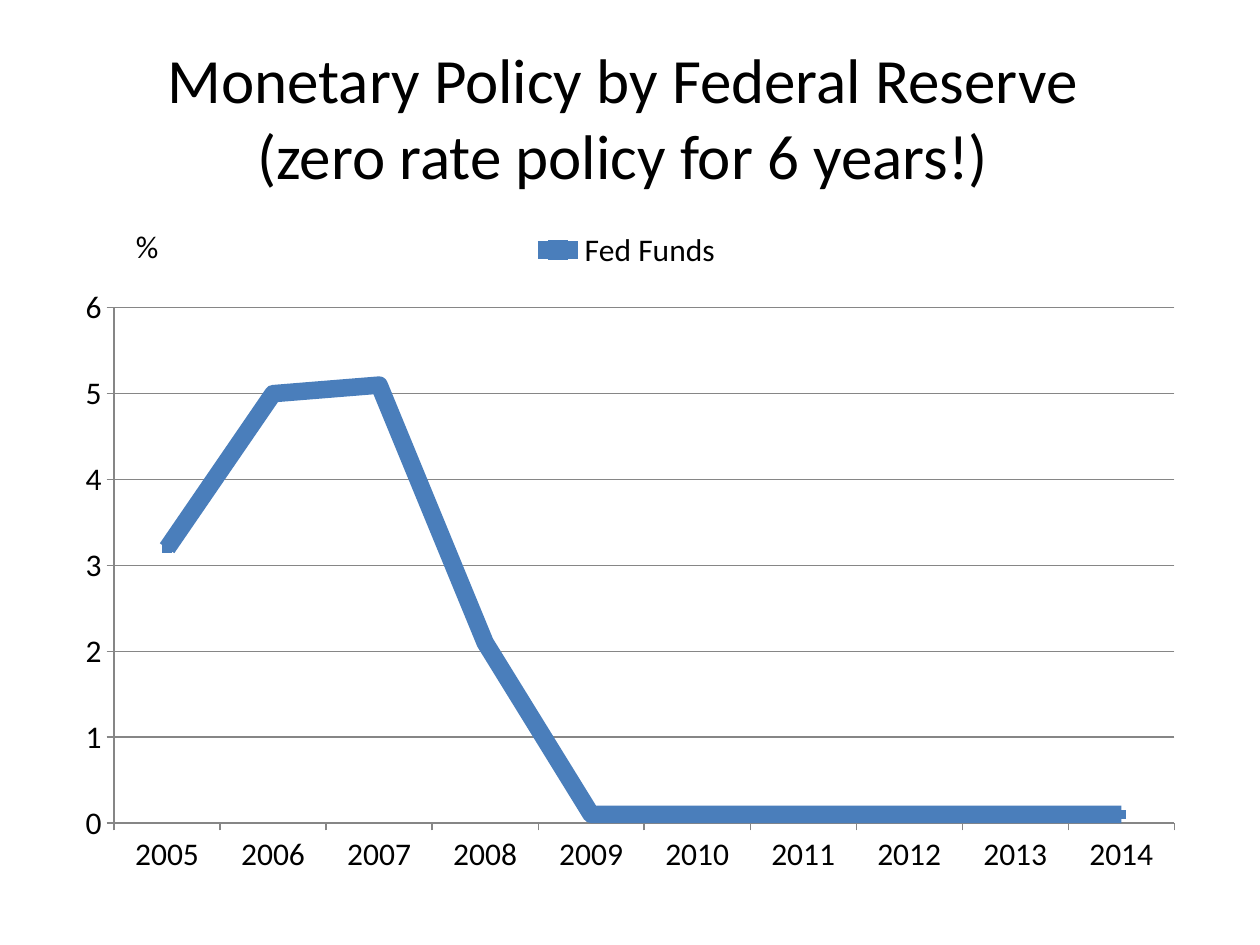
from dataclasses import dataclass

from pptx import Presentation
from pptx.chart.data import CategoryChartData
from pptx.dml.color import RGBColor
from pptx.enum import chart as ch, text
from pptx.util import Pt


@dataclass(frozen=True)
class Theme:
    font: str = "Calibri"
    ink: RGBColor = RGBColor(0, 0, 0)
    axis: RGBColor = RGBColor(0x86, 0x86, 0x86)
    line: RGBColor = RGBColor(0x4A, 0x7E, 0xBB)
    marker: RGBColor = RGBColor(0x4F, 0x81, 0xBD)
    title: Pt = Pt(36)
    body: Pt = Pt(18)


THEME = Theme()

prs = Presentation()
prs.slide_width, prs.slide_height = Pt(720), Pt(540)
s = prs.slides.add_slide(prs.slide_layouts[6])


def add_text(content, left, top, width, height, size=THEME.body, wrap=True,
             align=text.PP_ALIGN.LEFT, anchor=text.MSO_ANCHOR.TOP):
    sp = s.shapes.add_textbox(Pt(left), Pt(top), Pt(width), Pt(height))
    tf = sp.text_frame
    tf.word_wrap = wrap
    tf.vertical_anchor = anchor
    p = tf.paragraphs[0]
    p.text = content
    p.alignment = align
    for r in p.runs:
        r.font.name, r.font.size = THEME.font, size
        r.font.color.rgb = THEME.ink


add_text("Monetary Policy by Federal Reserve \v(zero rate policy for 6 years!) ",
         36, 21.6, 648, 90, size=THEME.title,
         align=text.PP_ALIGN.CENTER, anchor=text.MSO_ANCHOR.MIDDLE)

# Federal funds rate by year
data = CategoryChartData()
data.categories = [str(year) for year in range(2005, 2015)]
data.add_series("Fed Funds ", [3.2, 5, 5.1, 2.1] + [0.1] * 6)
chart = s.shapes.add_chart(ch.XL_CHART_TYPE.LINE_MARKERS, Pt(36), Pt(123.12),
                           Pt(648), Pt(383.76), data).chart
chart.has_title = False
chart.font.name, chart.font.size = THEME.font, THEME.body
chart.font.color.rgb = THEME.ink
chart.has_legend = True
chart.legend.position = ch.XL_LEGEND_POSITION.TOP
chart.legend.include_in_layout = False

value_axis = chart.value_axis
value_axis.minimum_scale, value_axis.maximum_scale = 0, 6
value_axis.major_unit = 1
value_axis.has_major_gridlines = True
for axis in (chart.category_axis, value_axis):
    axis.major_tick_mark = ch.XL_TICK_MARK.OUTSIDE
    axis.minor_tick_mark = ch.XL_TICK_MARK.NONE
for item in (chart.category_axis, value_axis, value_axis.major_gridlines):
    item.format.line.color.rgb = THEME.axis
    item.format.line.width = Pt(0.75)

chart.plots[0].vary_by_categories = False
rate = chart.plots[0].series[0]
rate.smooth = False
rate.format.line.color.rgb = THEME.line
rate.format.line.width = Pt(10)
rate.marker.style = ch.XL_MARKER_STYLE.SQUARE
rate.marker.size = 5
rate.marker.format.fill.solid()
rate.marker.format.fill.fore_color.rgb = THEME.marker
rate.marker.format.line.color.rgb = THEME.line

add_text("%", 70.56, 126, 27.36, 28.8, wrap=False)

prs.save("out.pptx")
